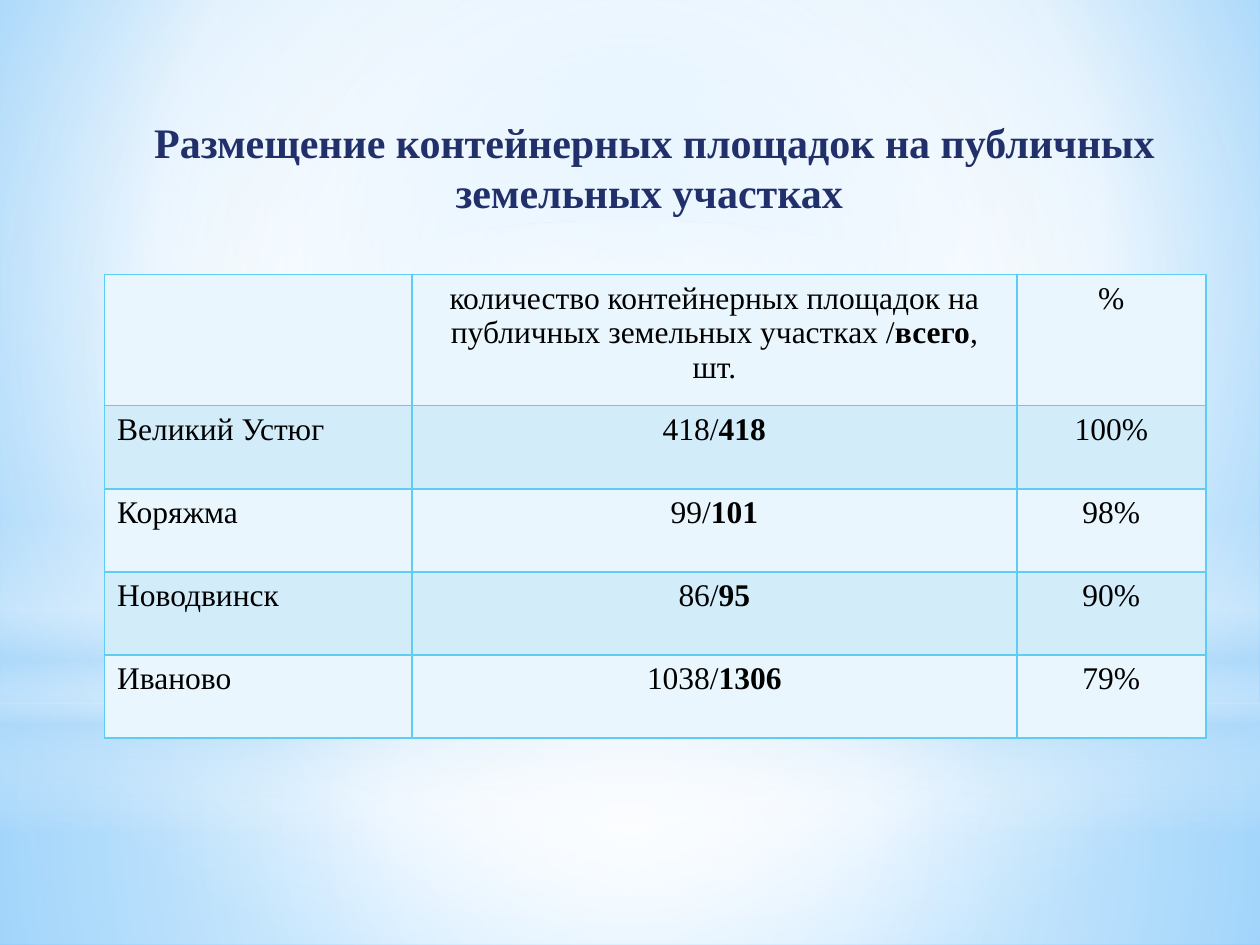
"""Build a slide with a table of container sites on public land plots."""
from lxml.etree import SubElement
from pptx import Presentation
from pptx.dml.color import RGBColor
from pptx.enum.shapes import MSO_SHAPE as SHAPE
from pptx.enum.text import MSO_ANCHOR as ANCHOR, PP_ALIGN as ALIGN
from pptx.oxml.ns import qn
from pptx.util import Pt

FONT = "Times New Roman"
TITLE = "Размещение контейнерных площадок на публичных земельных участках "
HEADER = [
    [],
    [[("количество контейнерных площадок на публичных земельных участках /", False),
      ("всего", True), (",", False)],
     [("шт.", False)]],
    [[("%", False)]],
]
CITIES = [
    ("Великий Устюг", "418", "418", "100%"),
    ("Коряжма", "99", "101", "98%"),
    ("Новодвинск", "86", "95", "90%"),
    ("Иваново", "1038", "1306", "79%"),
]
COLUMNS = [175.68, 345.6, 108]
ROWS = [74.88] + [47.52] * len(CITIES)
BANDS = ["EAF6FD", "D2ECFA"]
BORDER = "5ECCF3"

CENTRE = (50, 50, 50, 50)
BACKGROUND = [(0, "9ED5FF", 100), (60, "FFFFFF", 100), (100, "5BB9FF", 100)]
GLOWS = [
    (SHAPE.RECTANGLE, 401.76, 138.24, CENTRE,
     [(0, "FFFFFF", 91), (37, "FFFFFF", 76), (100, "B4DCFA", 79)]),
    (SHAPE.RECTANGLE, 0, 401.76, CENTRE,
     [(0, "FFFFFF", 89), (48, "FFFFFF", 62), (100, "B4DCFA", 79)]),
    (SHAPE.RECTANGLE, 296.64, 180, None,
     [(0, "FFFFFF", 0), (29, "FFFFFF", 30), (45, "B4DCFA", 40),
      (55, "FFFFFF", 26), (65, "B4DCFA", 60), (100, "FFFFFF", 0)]),
    (SHAPE.OVAL, 126, 401.76, CENTRE, [(0, "FFFFFF", 100), (56, "FFFFFF", 0)]),
]


def colour(value):
    return RGBColor.from_string(value)


def node(parent, tag, **attributes):
    return SubElement(parent, qn(tag), {key: str(value) for key, value in attributes.items()})


def set_gradient(fill, owner, stops, focus):
    fill.solid()
    solid = owner.find(qn("a:solidFill"))
    gradient = node(owner, "a:gradFill", rotWithShape=1)
    owner.replace(solid, gradient)
    stop_list = node(gradient, "a:gsLst")
    for position, value, opacity in stops:
        stop = node(stop_list, "a:gs", pos=position * 1000)
        tint = node(stop, "a:srgbClr", val=value)
        if opacity < 100:
            node(tint, "a:alpha", val=opacity * 1000)
    if focus:
        circle = node(gradient, "a:path", path="circle")
        node(circle, "a:fillToRect", **{side: part * 1000 for side, part in zip("ltrb", focus)})
    else:
        node(gradient, "a:lin", ang=90 * 60000, scaled=0)


def add_glow(page, kind, top, height, focus, stops):
    glow = page.shapes.add_shape(kind, 0, Pt(top), Pt(720), Pt(height))
    glow.shadow.inherit = False
    glow.line.fill.background()
    set_gradient(glow.fill, glow.element.spPr, stops, focus)


def add_span(para, text, size, value, bold):
    span = para.add_run()
    span.text = text
    span.font.name = FONT
    span.font.size = Pt(size)
    span.font.bold = bold
    span.font.color.rgb = colour(value)


def set_borders(cell):
    properties = cell._tc.get_or_add_tcPr()
    for index, side in enumerate("LRTB"):
        line = node(properties, f"a:ln{side}", w=Pt(1))
        node(node(line, "a:solidFill"), "a:srgbClr", val=BORDER)
        properties.insert(index, line)


def fill_cell(cell, paragraphs, align, band):
    cell.fill.solid()
    cell.fill.fore_color.rgb = colour(band)
    set_borders(cell)
    frame = cell.text_frame
    for index, spans in enumerate(paragraphs):
        para = frame.add_paragraph() if index else frame.paragraphs[0]
        para.alignment = align
        for text, bold in spans:
            add_span(para, text, 18, "000000", bold)


def add_title(page):
    box = page.shapes.title
    page.shapes.element.append(box.element)
    box.left, box.top, box.width, box.height = Pt(36.72), Pt(62.64), Pt(674.64), Pt(65.52)
    frame = box.text_frame
    frame.word_wrap = True
    frame.vertical_anchor = ANCHOR.MIDDLE
    para = frame.paragraphs[0]
    para.alignment = ALIGN.CENTER
    add_span(para, TITLE, 24, "21306A", True)


def add_city_table(page):
    table = page.shapes.add_table(len(ROWS), len(COLUMNS), Pt(59.76), Pt(156.96),
                                  Pt(sum(COLUMNS)), Pt(sum(ROWS))).table
    table.first_row = table.horz_banding = False
    for column, width in zip(table.columns, COLUMNS):
        column.width = Pt(width)
    for row, height in zip(table.rows, ROWS):
        row.height = Pt(height)
    body = [[[[(city, False)]], [[(public + "/", False), (total, True)]], [[(share, False)]]]
            for city, public, total, share in CITIES]
    for r, cells in enumerate([HEADER] + body):
        for c, paragraphs in enumerate(cells):
            align = ALIGN.CENTER if c else ALIGN.LEFT
            fill_cell(table.cell(r, c), paragraphs, align, BANDS[r % 2])


def main():
    deck = Presentation()
    deck.slide_width, deck.slide_height = Pt(720), Pt(540)
    page = deck.slides.add_slide(deck.slide_layouts[5])
    fill = page.background.fill
    set_gradient(fill, page.element.find(".//" + qn("p:bgPr")), BACKGROUND, (20, 10, 20, 60))
    for glow in GLOWS:
        add_glow(page, *glow)
    add_title(page)
    add_city_table(page)
    deck.save("out.pptx")


if __name__ == "__main__":
    main()
